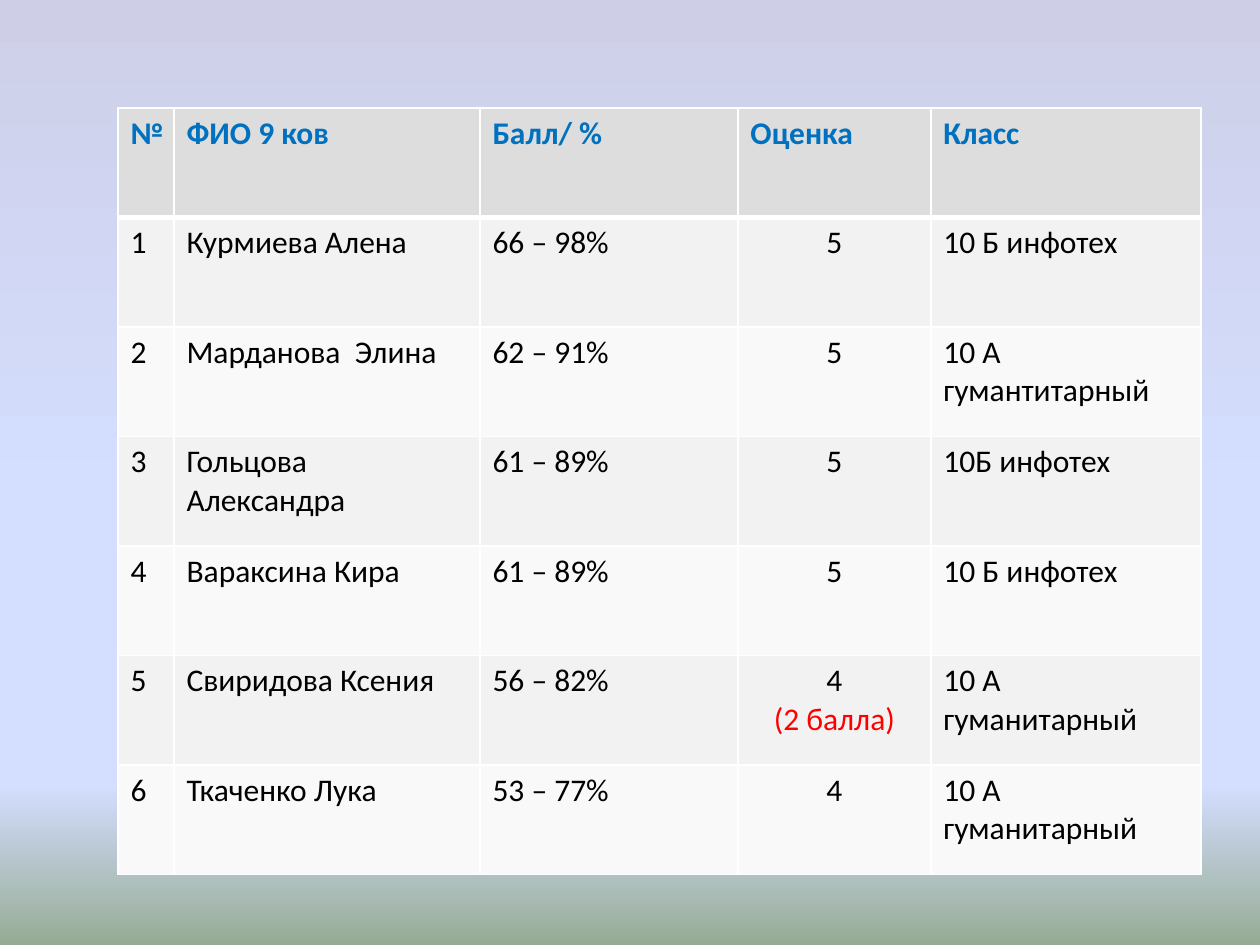
from lxml import etree
from pptx import Presentation
from pptx import util as u
from pptx.dml.color import RGBColor
from pptx.enum import text
from pptx.oxml.ns import qn

PX = 914400 // 126

HEADER = ["№", "ФИО 9 ков", "Балл/ %", "Оценка", "Класс"]
STUDENTS = [
    ["1", "Курмиева Алена", "66 – 98%", "5", "10 Б инфотех"],
    ["2", "Марданова  Элина", "62 – 91%", "5", "10 А гумантитарный"],
    ["3", "Гольцова Александра", "61 – 89%", "5", "10Б инфотех"],
    ["4", "Вараксина Кира", "61 – 89%", "5", "10 Б инфотех"],
    ["5", "Свиридова Ксения", "56 – 82%", "4\n(2 балла)", "10 А гуманитарный"],
    ["6", "Ткаченко Лука", "53 – 77%", "4", "10 А гуманитарный"],
]
GRADE_COL = HEADER.index("Оценка")


def px(n):
    return u.Emu(n * PX)


def rgb(color):
    return RGBColor.from_string(color)


def add_color(parent, color, alpha=100):
    clr = etree.SubElement(parent, qn("a:srgbClr"), val=color)
    if alpha < 100:
        etree.SubElement(clr, qn("a:alpha"), val=str(alpha * 1000))


class Deck:
    font, size = "Calibri", 18
    head_color, body_color, note_color = "0070C0", "000000", "FF0000"
    head_fill, band_fills = "DDDDDD", ("F9F9F9", "F2F2F2")
    border = "FFFFFF"

    def __init__(self, prs):
        self.s = prs.slides.add_slide(prs.slide_layouts[6])

    def background(self, stops):
        """Fill the slide from top to bottom with (percent, colour, alpha) stops."""
        fill = self.s.background.fill
        fill.gradient()
        fill.gradient_angle = 270
        gs_list = self.s.element.find(".//" + qn("a:gsLst"))
        for gs in list(gs_list):
            gs_list.remove(gs)
        for pos, color, alpha in stops:
            gs = etree.SubElement(gs_list, qn("a:gs"), pos=str(pos * 1000))
            add_color(gs, color, alpha)

    def table(self, left, top, height, widths, rows):
        frame = self.s.shapes.add_table(len(rows), len(widths), px(left), px(top),
                                        px(sum(widths)), px(height))
        table = frame.table
        for column, width in zip(table.columns, widths):
            column.width = px(width)
        for i, row in enumerate(rows):
            for j, value in enumerate(row):
                self.cell(table.cell(i, j), value, i, j)

    def cell(self, cell, value, row, col):
        is_head = row == 0
        self.borders(cell, top=3 if row == 1 else 1, bottom=3 if is_head else 1)
        cell.fill.solid()
        cell.fill.fore_color.rgb = rgb(self.head_fill if is_head
                                       else self.band_fills[row % 2])
        cell.text_frame.text = value
        for n, p in enumerate(cell.text_frame.paragraphs):
            if col == GRADE_COL and not is_head:
                p.alignment = text.PP_ALIGN.CENTER
            color = self.head_color if is_head else self.body_color
            for r in p.runs:
                r.font.name = self.font
                r.font.size = u.Pt(self.size)
                r.font.bold = is_head
                r.font.color.rgb = rgb(self.note_color if n else color)

    def borders(self, cell, top, bottom):
        tc_pr = cell._tc.get_or_add_tcPr()
        for side, width in (("L", 1), ("R", 1), ("T", top), ("B", bottom)):
            ln = etree.SubElement(tc_pr, qn("a:ln" + side), w=str(u.Pt(width)))
            add_color(etree.SubElement(ln, qn("a:solidFill")), self.border)


def main():
    prs = Presentation()
    prs.slide_width, prs.slide_height = u.Inches(10), u.Inches(7.5)
    deck = Deck(prs)
    deck.background([(0, "CECFE7", 67), (53, "D4DEFF", 100),
                     (83, "D4DEFF", 100), (100, "96AB94", 100)])
    deck.table(118, 108, 767, [56, 306, 258, 193, 270], [HEADER] + STUDENTS)
    prs.save("out.pptx")


if __name__ == "__main__":
    main()
